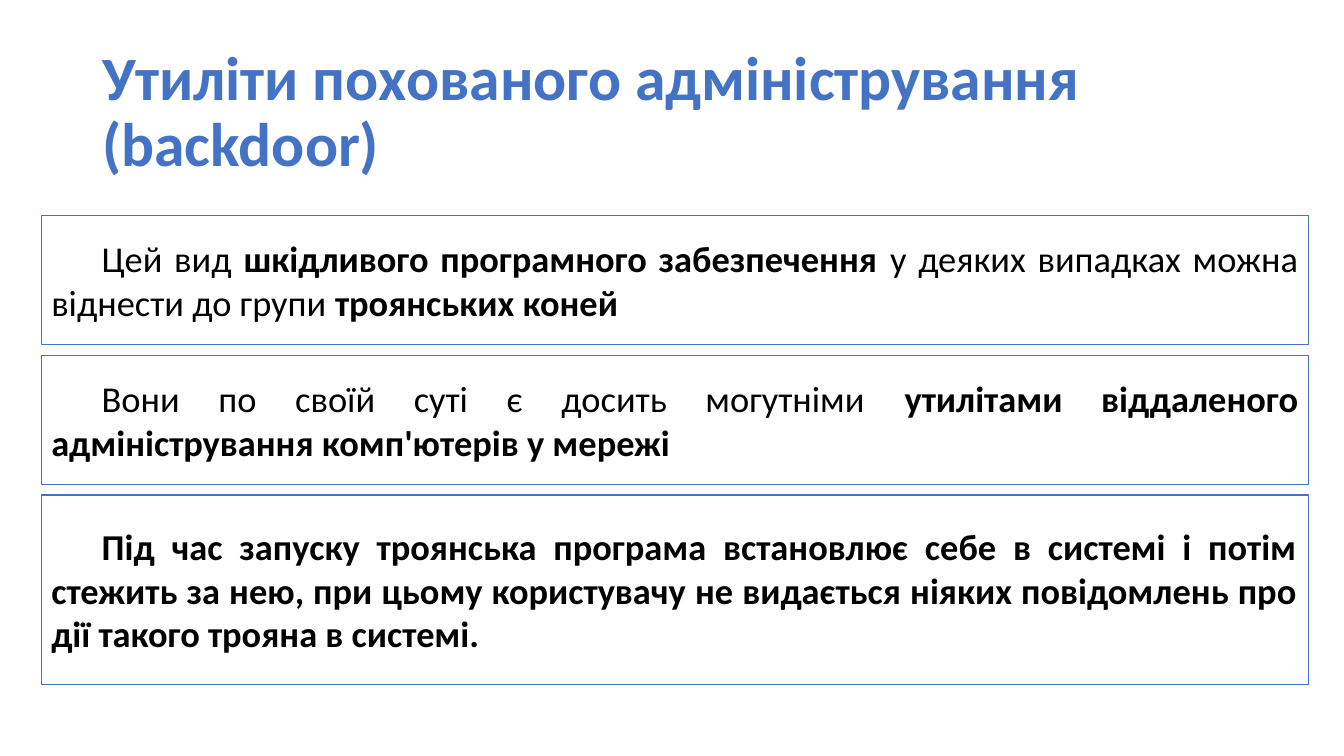
from pptx import Presentation
from pptx.dml.color import RGBColor
from pptx.enum.shapes import MSO_SHAPE
from pptx.enum.text import MSO_ANCHOR, PP_ALIGN
from pptx.util import Inches, Pt

RECTANGLE = MSO_SHAPE.RECTANGLE
MIDDLE = MSO_ANCHOR.MIDDLE
JUSTIFY = PP_ALIGN.JUSTIFY

TITLE = "Утиліти похованого адміністрування (backdoor)"
STATEMENTS = [
    (17.07, [
        ("Цей вид ", False),
        ("шкідливого програмного забезпечення ", True),
        ("у деяких випадках можна віднести до групи ", False),
        ("троянських коней", True),
    ]),
    (17.07, [
        ("Вони по своїй суті є досить могутніми ", False),
        ("утилітами віддаленого адміністрування комп'ютерів у мережі", True),
    ]),
    (25.07, [
        ("Під час запуску троянська програма встановлює себе в системі і потім "
         "стежить за нею, при цьому користувачу не видається ніяких повідомлень "
         "про дії такого трояна в системі.", True),
    ]),
]
FIRST_TOP = 28.53
GAP = 1.4


def color(value):
    return RGBColor.from_string(value)


class SlideBuilder:
    font_name = "Calibri"
    accent = color("4472C4")
    ink = color("000000")
    paper = color("FFFFFF")

    def __init__(self, presentation):
        self.width = presentation.slide_width
        self.height = presentation.slide_height
        self.slide = presentation.slides.add_slide(presentation.slide_layouts[6])

    def place(self, left, top, width, height):
        return (
            round(self.width * left / 100),
            round(self.height * top / 100),
            round(self.width * width / 100),
            round(self.height * height / 100),
        )

    def fill_text(self, shape, parts, size, font_color):
        frame = shape.text_frame
        frame.word_wrap = True
        frame.vertical_anchor = MIDDLE
        paragraph = frame.paragraphs[0]
        paragraph.font.name = self.font_name
        paragraph.font.size = Pt(size)
        paragraph.font.color.rgb = font_color
        weights = {bold for _, bold in parts}
        if len(weights) == 1:
            paragraph.font.bold = weights.pop()
        for text, bold in parts:
            run = paragraph.add_run()
            run.text = text
            if paragraph.font.bold is None:
                run.font.bold = bold
        return paragraph

    def title(self, text, *area):
        shape = self.slide.shapes.add_textbox(*self.place(*area))
        paragraph = self.fill_text(shape, [(text, True)], 44, self.accent)
        paragraph.line_spacing = 0.9

    def statement(self, parts, *area):
        shape = self.slide.shapes.add_shape(RECTANGLE, *self.place(*area))
        shape.shadow.inherit = False
        shape.fill.solid()
        shape.fill.fore_color.rgb = self.paper
        shape.line.color.rgb = self.accent
        shape.line.width = Pt(1)
        paragraph = self.fill_text(shape, parts, 26, self.ink)
        paragraph.alignment = JUSTIFY
        properties = paragraph._p.get_or_add_pPr()
        properties.set("marL", "0")
        properties.set("indent", str(Inches(0.5)))


def main():
    presentation = Presentation()
    presentation.slide_width = Inches(13.33)
    presentation.slide_height = Inches(7.5)
    builder = SlideBuilder(presentation)
    builder.title(TITLE, 6.88, 5.33, 86.25, 19.33)
    top = FIRST_TOP
    for height, parts in STATEMENTS:
        builder.statement(parts, 3.08, top, 94.3, height)
        top += height + GAP
    presentation.save("out.pptx")


if __name__ == "__main__":
    main()
